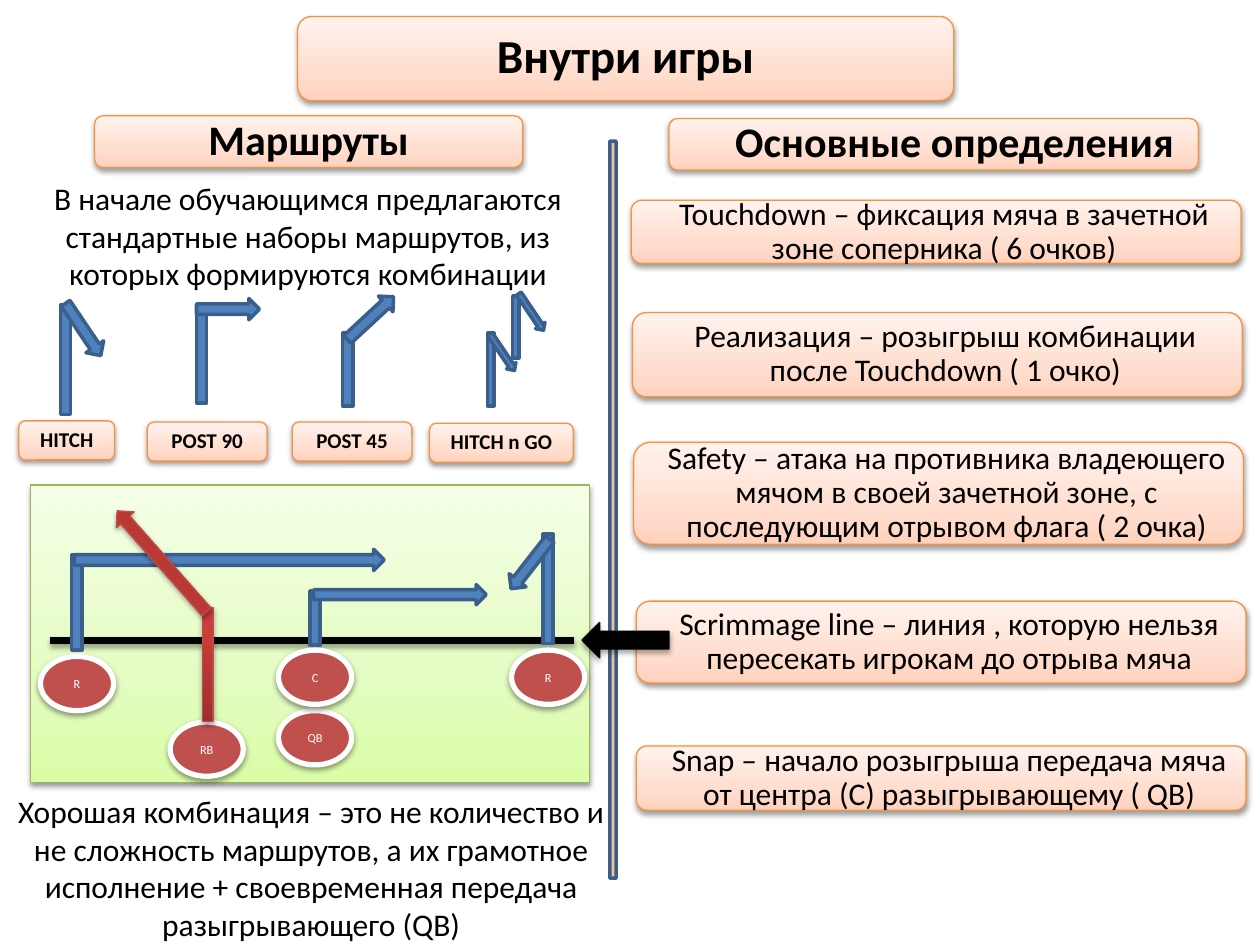
from pptx import Presentation
from pptx.dml.color import RGBColor
from pptx.enum.shapes import MSO_SHAPE
from pptx.enum.text import MSO_ANCHOR, PP_ALIGN
from pptx.oxml import parse_xml
from pptx.oxml.ns import nsdecls
from pptx.util import Pt

FONT = "Calibri"
BLACK = RGBColor(0, 0, 0)
WHITE = RGBColor(255, 255, 255)
BLUE = RGBColor(0x4F, 0x81, 0xBD)
BLUE_EDGE = RGBColor(0x3A, 0x5F, 0x8C)
RED = RGBColor(0xC0, 0x50, 0x4D)
RED_EDGE = RGBColor(0xBF, 0x4C, 0x48)
ORANGE = RGBColor(0xFA, 0xC0, 0x90)
ORANGE_EDGE = RGBColor(0xF6, 0x92, 0x40)
GREEN_EDGE = RGBColor(0x98, 0xB9, 0x55)

# Gradients run from bottom to top: (position in percent, colour)
PEACH_BLEND = [(0, RGBColor(0xFF, 0xD2, 0xBD)), (35, RGBColor(0xFF, 0xDE, 0xD0)),
               (100, RGBColor(0xFF, 0xF2, 0xED))]
GREEN_BLEND = [(0, RGBColor(0xDA, 0xFD, 0xA7)), (35, RGBColor(0xE4, 0xFC, 0xC2)),
               (100, RGBColor(0xF5, 0xFF, 0xE7))]
RED_BLEND = [(0, RGBColor(0x9C, 0x2F, 0x2D)), (80, RGBColor(0xCB, 0x3E, 0x3A)),
             (100, RGBColor(0xCE, 0x3B, 0x37))]

# Styles: fill (colour or blend), edge colour, edge width, shadow opacity
CARD = (PEACH_BLEND, ORANGE_EDGE, 0.75, 38)
GRASS = (GREEN_BLEND, GREEN_EDGE, 0.75, 38)
PLAYER = (RED, WHITE, 3, 38)
ROUTE = (BLUE, BLUE_EDGE, 2, 0)
RUN = (RED_BLEND, RED_EDGE, 0.75, 35)
MARK = (BLACK, BLACK, 0.75, 35)
DIVIDER = (ORANGE, BLUE_EDGE, 2, 0)


def set_gradient(fill, blend):
    fill.gradient()
    fill.gradient_angle = 90
    stops = "".join(f'<a:gs pos="{position * 1000}"><a:srgbClr val="{colour}"/></a:gs>'
                    for position, colour in blend)
    old_list = fill.gradient_stops[0]._gs.getparent()
    old_list.getparent().replace(
        old_list, parse_xml(f'<a:gsLst {nsdecls("a")}>{stops}</a:gsLst>'))


def set_shadow(shape, opacity):
    distance = 1.6 if opacity == 38 else 1.8
    shape._element.spPr.find(".//{*}effectLst").append(parse_xml(
        f'<a:outerShdw {nsdecls("a")} blurRad="{Pt(3.1)}" dist="{Pt(distance)}" '
        f'dir="5400000" rotWithShape="0"><a:srgbClr val="000000">'
        f'<a:alpha val="{opacity * 1000}"/></a:srgbClr></a:outerShdw>'))


def add_part(slide, kind, box, style, rotation=0):
    fill, edge, width, opacity = style
    shape = slide.shapes.add_shape(kind, *map(Pt, box))
    shape.rotation = rotation
    shape.shadow.inherit = False
    if isinstance(fill, list):
        set_gradient(shape.fill, fill)
    else:
        shape.fill.solid()
        shape.fill.fore_color.rgb = fill
    shape.line.color.rgb = edge
    shape.line.width = Pt(width)
    if opacity:
        set_shadow(shape, opacity)
    return shape


def write(shape, text, size, colour=BLACK, bold=False, spacing=1.0, margins=(7.2, 3.6)):
    frame = shape.text_frame
    across, down = map(Pt, margins)
    frame_format = {"word_wrap": True, "vertical_anchor": MSO_ANCHOR.MIDDLE,
                    "margin_left": across, "margin_right": across,
                    "margin_top": down, "margin_bottom": down}
    for name, value in frame_format.items():
        setattr(frame, name, value)
    paragraph = frame.paragraphs[0]
    paragraph.alignment = PP_ALIGN.CENTER
    paragraph.line_spacing = spacing
    run = paragraph.add_run()
    run.text = text
    for name, value in {"name": FONT, "size": Pt(size), "bold": bold}.items():
        setattr(run.font, name, value)
    run.font.color.rgb = colour


def add_card(slide, box, text, size, bold=True, shift=0):
    """Rounded card with its caption in a box moved sideways by shift."""
    add_part(slide, MSO_SHAPE.ROUNDED_RECTANGLE, box, CARD)
    left, top, width, height = box
    caption = slide.shapes.add_textbox(Pt(left + 1.5 + shift), Pt(top),
                                       Pt(width - 3), Pt(height))
    write(caption, text, size, bold=bold, spacing=0.9, margins=(7.9, 7.9))


def add_route(slide, origin, stem, arrow, style=ROUTE):
    """Stem box, then arrow box with its rotation, both relative to origin."""
    x, y = origin
    left, top, width, height = stem
    add_part(slide, MSO_SHAPE.RECTANGLE, (x + left, y + top, width, height), style)
    left, top, width, height, rotation = arrow
    add_part(slide, MSO_SHAPE.RIGHT_ARROW, (x + left, y + top, width, height),
             style, rotation)


def add_headings(slide, box):
    x, y = box[:2]
    add_card(slide, (x + 116, y, 375, 48.2), "Внутри игры", 27)
    add_card(slide, (x, y + 56.8, 244.8, 29.5), "Маршруты", 24)
    add_card(slide, (x + 328.3, y + 58.3, 302.4, 29.5), "Основные определения", 24, shift=12)


def add_route_samples(slide, box):
    origin = x, y = box[:2]
    add_route(slide, origin, (23.8, 5.2, 5.8, 62.6), (18.7, 13.2, 36, 12.2, 56))
    add_route(slide, origin, (101.5, 6.7, 5.8, 54.7), (101.5, 1.6, 36, 12.2, 0))
    add_route(slide, origin, (185, 21.1, 5.8, 41.8), (182.9, 6.7, 36, 12.2, 317.2))
    add_route(slide, origin, (267.8, 21.1, 3.6, 41.8), (263.5, 29, 25.2, 6.5, 56))
    add_route(slide, origin, (282.2, 0.2, 3.6, 35.3), (280.1, 6, 25.2, 6.5, 56))
    for left, top, width, name in [(0, 71.5, 54.7, "HITCH"), (73.4, 72.2, 68.4, "POST 90"),
                                   (156.2, 72.2, 68.4, "POST 45"),
                                   (234.7, 72.9, 82.1, "HITCH n GO")]:
        add_card(slide, (x + left, y + top, width, 22.3), name, 12)


def add_field(slide, box):
    origin = x, y = box[:2]
    add_part(slide, MSO_SHAPE.RECTANGLE, box, GRASS)
    # Scrimmage line
    add_part(slide, MSO_SHAPE.RECTANGLE, (x + 11.5, y + 87.1, 298.8, 3.6), MARK)
    # Players
    for left, top, name in [(141.8, 128.9, "QB"), (141.8, 94.3, "C"), (275, 94.3, "R"),
                            (5.8, 97.9, "R"), (79.9, 135.4, "RB")]:
        player = add_part(slide, MSO_SHAPE.OVAL, (x + left, y + top, 41.8, 31), PLAYER)
        write(player, name, 7, WHITE)
    # Their routes
    add_route(slide, origin, (23.7, 39.6, 5.8, 54.7), (25.2, 36.7, 177.1, 12.2, 0))
    add_route(slide, origin, (159.8, 60.5, 5.8, 31), (162, 56.9, 98.6, 11.5, 0))
    add_route(slide, origin, (293, 28.1, 5.8, 62.6), (267.8, 38.9, 36, 12.2, 128))
    add_route(slide, origin, (98.6, 69.8, 5.8, 65.5), (36.7, 36.7, 77, 13.7, 228.5), RUN)


def add_definitions(slide, box):
    x, y, width, _ = box
    definitions = [
        (0, 0, 36, "Touchdown – фиксация мяча в зачетной зоне соперника ( 6 очков)"),
        (0.7, 64.1, 48.2, "Реализация – розыгрыш комбинации после Touchdown ( 1 очко)"),
        (1.4, 138.2, 58.3, "Safety – атака на противника владеющего мячом в своей "
                           "зачетной зоне, с последующим отрывом флага ( 2 очка)"),
        (2.9, 229, 46.8, "Scrimmage line – линия , которую нельзя пересекать "
                         "игрокам до отрыва мяча"),
        (2.9, 311.8, 36.7, "Snap – начало розыгрыша передача мяча от центра (С) "
                           "разыгрывающему ( QB)"),
    ]
    for left, top, height, text in definitions:
        add_card(slide, (x + left, y + top, width, height), text, 18, bold=False, shift=4.6)
    # Pointer to the scrimmage line
    add_part(slide, MSO_SHAPE.LEFT_ARROW, (x - 28.1, y + 241.2, 49.7, 20.2), MARK)


def main():
    presentation = Presentation()
    presentation.slide_width, presentation.slide_height = Pt(720), Pt(540)
    slide = presentation.slides.add_slide(presentation.slide_layouts[5])

    # Introduction in the title placeholder
    title = slide.shapes.title
    for name, value in {"left": 11.5, "top": 95, "width": 329, "height": 79.2}.items():
        setattr(title, name, Pt(value))
    write(title, "В начале обучающимся предлагаются стандартные наборы маршрутов, "
                 "из которых формируются комбинации", 18)

    add_headings(slide, (54, 9.4, 631, 88))
    add_part(slide, MSO_SHAPE.ROUND_1_RECTANGLE, (348.5, 80.6, 3.6, 421.2), DIVIDER)
    add_route_samples(slide, (10.8, 169, 317, 95))

    # Conclusion below the field
    conclusion = slide.shapes.add_textbox(Pt(0), Pt(451.4), Pt(355.7), Pt(88.6))
    write(conclusion, "Хорошая комбинация – это не количество и не сложность маршрутов, "
                      "а их грамотное исполнение + своевременная передача "
                      "разыгрывающего (QB)", 18)

    add_field(slide, (17.3, 277.2, 319.7, 169.9))
    add_definitions(slide, (360.7, 114.5, 348.5, 349))
    presentation.save("out.pptx")


if __name__ == "__main__":
    main()
